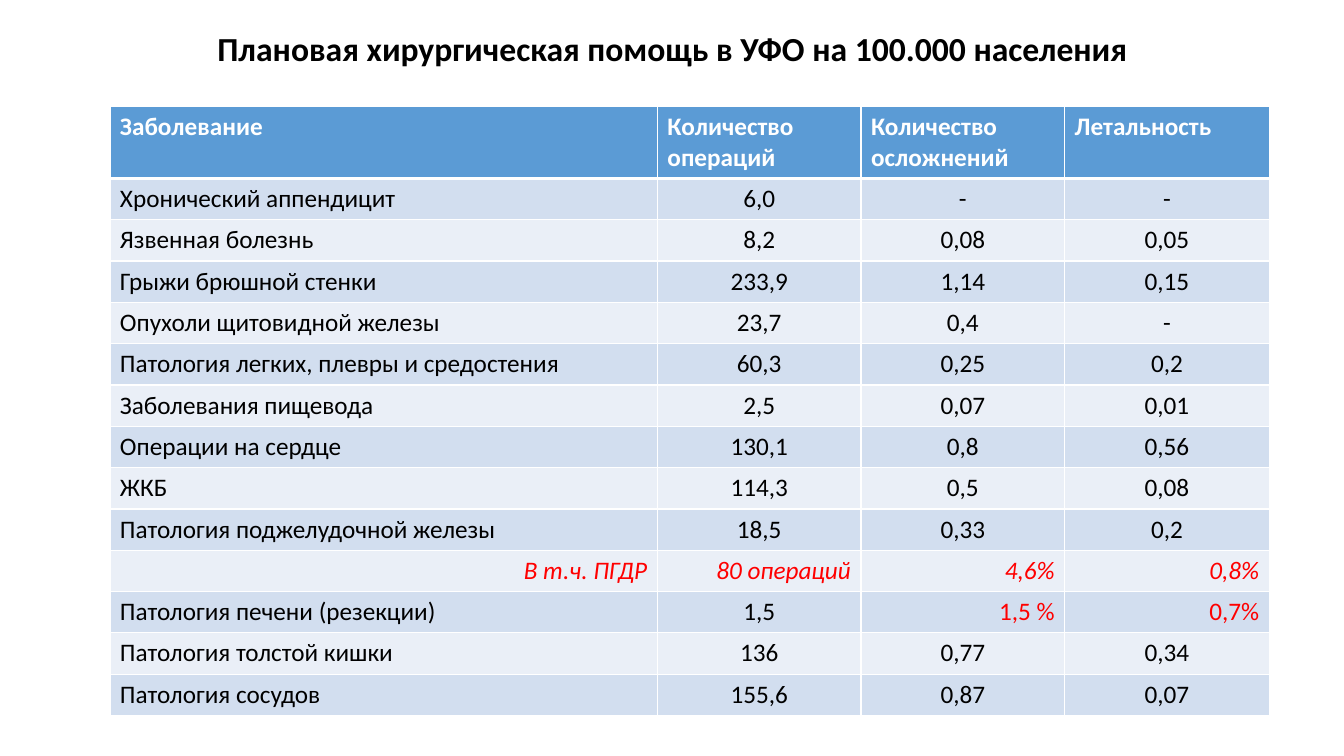
from lxml.etree import SubElement
from pptx import Presentation
from pptx.dml.color import RGBColor
from pptx.enum.text import MSO_ANCHOR, PP_ALIGN
from pptx.oxml.ns import qn
from pptx.util import Inches, Pt

FONT = "Calibri"
COLORS = {
    "header": "5B9BD5",
    "odd_row": "D2DEEF",
    "even_row": "EAEFF7",
    "white": "FFFFFF",
    "text": "000000",
    "accent": "FF0000",
}
TITLE = "Плановая хирургическая помощь в УФО на 100.000 населения"
COLUMN_WIDTHS = [5.43, 2.02, 2.02, 2.03]
ROW_HEIGHT = 0.41
ROWS = [
    ["Заболевание", "Количество операций", "Количество осложнений", "Летальность"],
    ["Хронический аппендицит", "6,0", "-", "-"],
    ["Язвенная болезнь", "8,2", "0,08", "0,05"],
    ["Грыжи брюшной стенки", "233,9", "1,14", "0,15"],
    ["Опухоли щитовидной железы", "23,7", "0,4", "-"],
    ["Патология легких, плевры и средостения", "60,3", "0,25", "0,2"],
    ["Заболевания пищевода", "2,5", "0,07", "0,01"],
    ["Операции на сердце", "130,1", "0,8", "0,56"],
    ["ЖКБ", "114,3", "0,5", "0,08"],
    ["Патология поджелудочной железы", "18,5", "0,33", "0,2"],
    ["В т.ч. ПГДР", "80 операций", "4,6%", "0,8%"],
    ["Патология печени (резекции)", "1,5", "1,5 %", "0,7%"],
    ["Патология толстой кишки", "136", "0,77", "0,34"],
    ["Патология сосудов", "155,6", "0,87", "0,07"],
]
SUBGROUP_ROW = 10
# Red, right-aligned cells: the whole subgroup row and two liver percentages
ACCENT_CELLS = {(SUBGROUP_ROW, column) for column in range(4)} | {(11, 2), (11, 3)}


def format_paragraph(paragraph, size, color, alignment, bold=False, italic=False):
    paragraph.alignment = alignment
    for run in paragraph.runs:
        font = run.font
        font.name = FONT
        font.size = Pt(size)
        font.bold = bold
        font.italic = italic
        font.color.rgb = RGBColor.from_string(COLORS[color])


def set_borders(cell, top=1, bottom=1):
    properties = cell._tc.get_or_add_tcPr()
    widths = {"a:lnL": 1, "a:lnR": 1, "a:lnT": top, "a:lnB": bottom}
    for tag, width in widths.items():
        line = SubElement(properties, qn(tag), w=str(Pt(width)))
        fill = SubElement(line, qn("a:solidFill"))
        SubElement(fill, qn("a:srgbClr"), val=COLORS["white"])


def format_cell(cell, row, column):
    # Borders come before the fill in the cell properties
    set_borders(cell, top=3 if row == 1 else 1, bottom=3 if row == 0 else 1)
    fill_name = "header" if row == 0 else "odd_row" if row % 2 else "even_row"
    cell.fill.solid()
    cell.fill.fore_color.rgb = RGBColor.from_string(COLORS[fill_name])

    color, alignment = "text", PP_ALIGN.CENTER
    if row == 0:
        color, alignment = "white", PP_ALIGN.LEFT
    elif (row, column) in ACCENT_CELLS:
        color, alignment = "accent", PP_ALIGN.RIGHT
    elif column == 0:
        alignment = PP_ALIGN.LEFT
    format_paragraph(cell.text_frame.paragraphs[0], 18, color, alignment,
                     bold=row == 0, italic=row == SUBGROUP_ROW)


def add_title(slide):
    title = slide.shapes.title
    title.left, title.top = Inches(0.92), Inches(0.27)
    title.width, title.height = Inches(11.5), Inches(0.46)
    title.text_frame.text = TITLE
    title.text_frame.word_wrap = True
    title.text_frame.vertical_anchor = MSO_ANCHOR.MIDDLE
    paragraph = title.text_frame.paragraphs[0]
    paragraph.line_spacing = 0.9
    format_paragraph(paragraph, 24, "text", PP_ALIGN.CENTER, bold=True)


def add_surgery_table(slide):
    frame = slide.shapes.add_table(len(ROWS), len(COLUMN_WIDTHS), Inches(1.09),
                                   Inches(1.06), Inches(11.5), Inches(5.97))
    table = frame.table
    for column, width in zip(table.columns, COLUMN_WIDTHS):
        column.width = Inches(width)
    for row in table.rows:
        row.height = Inches(ROW_HEIGHT)
    # The two-line header makes the table taller than its nominal rows
    frame.height = Inches(5.97)

    for row, values in enumerate(ROWS):
        for column, value in enumerate(values):
            cell = table.cell(row, column)
            cell.text_frame.text = value
            format_cell(cell, row, column)


def main():
    presentation = Presentation()
    presentation.slide_width = Inches(13.33)
    presentation.slide_height = Inches(7.5)
    slide = presentation.slides.add_slide(presentation.slide_layouts[5])
    add_title(slide)
    add_surgery_table(slide)
    presentation.save("out.pptx")


if __name__ == "__main__":
    main()
